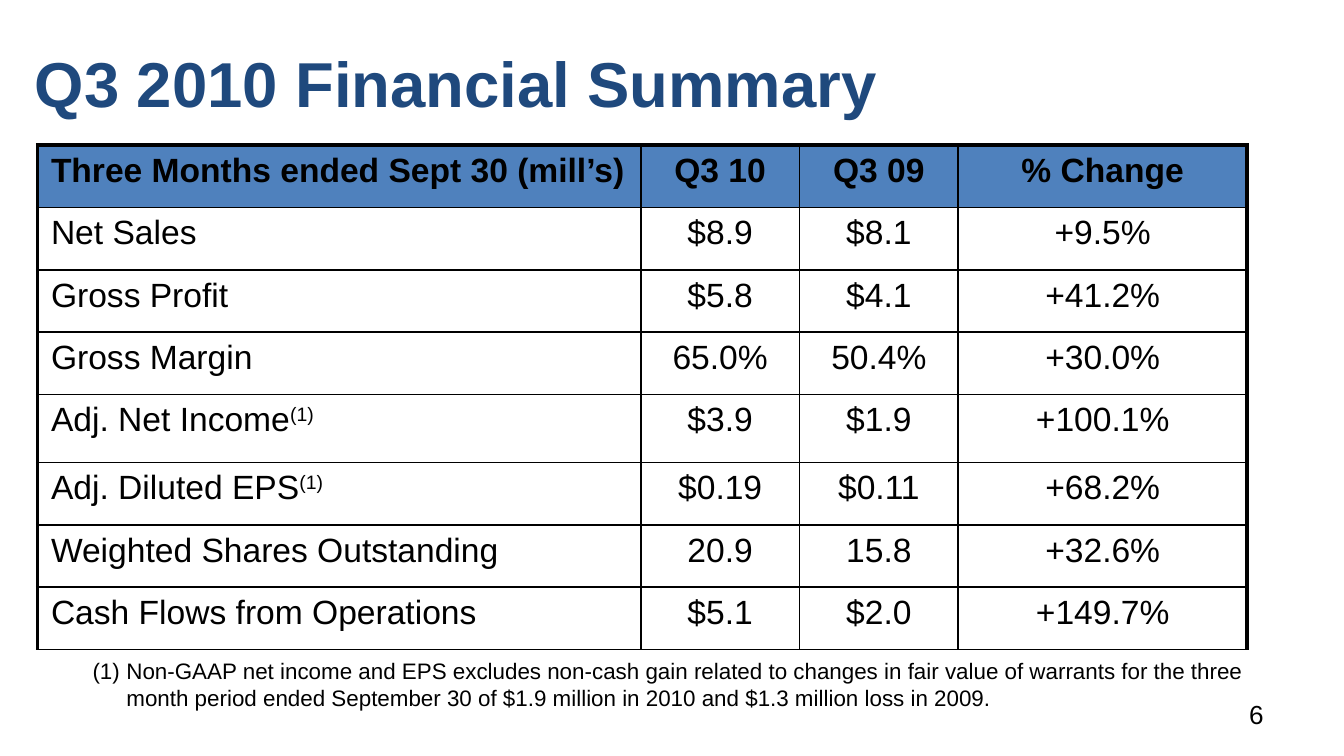
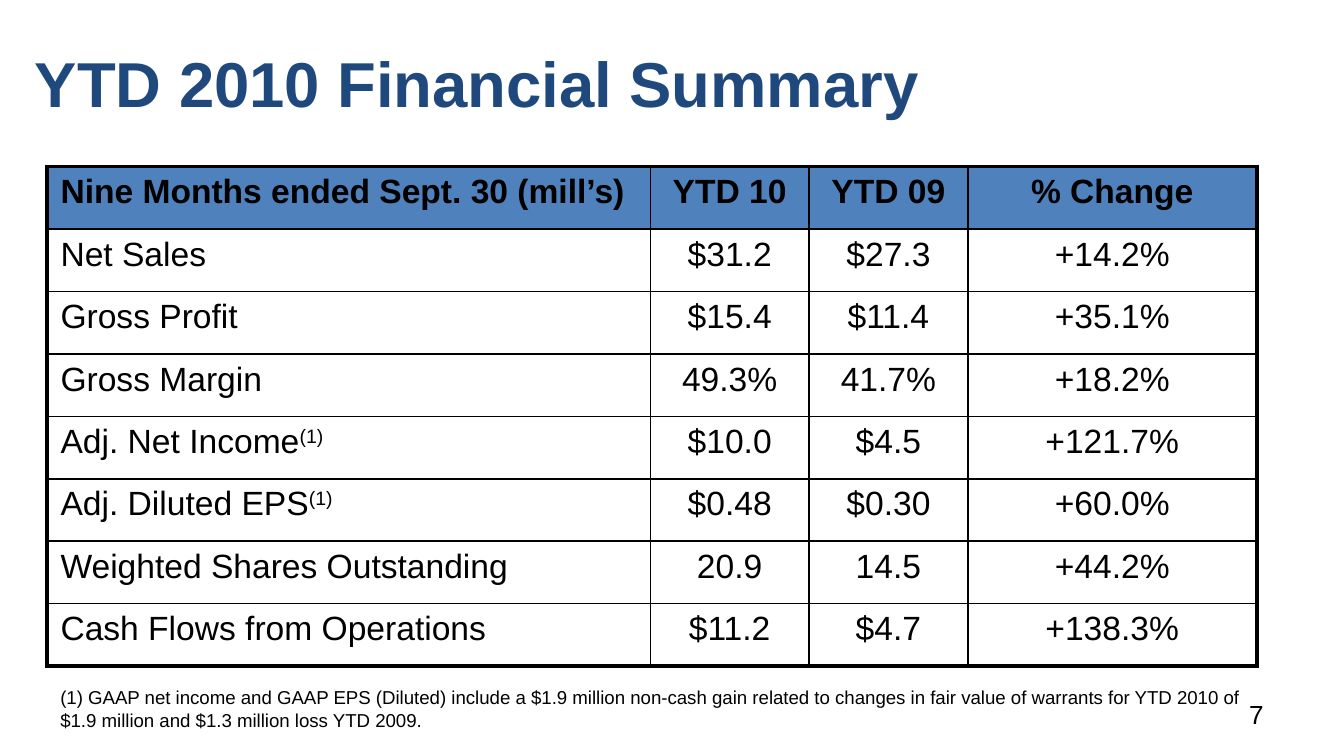
from dataclasses import dataclass

from lxml.etree import SubElement
from pptx import Presentation
from pptx.dml.color import RGBColor
from pptx.enum.text import MSO_ANCHOR, PP_ALIGN
from pptx.oxml import parse_xml
from pptx.oxml.ns import nsdecls, qn
from pptx.util import Cm, Pt


@dataclass(frozen=True)
class Theme:
    font: str = "Arial"
    navy: str = "1F497D"
    blue: str = "4F81BD"
    black: str = "000000"
    title: int = 34
    body: int = 18
    page: int = 14
    thin: float = 1
    thick: float = 2.25


THEME = Theme()
WIDTHS = (11.4, 3, 3, 5.46)
ROW = 1.18
TALL = 1.28
MARK = "(1)"
LABELS = (
    "Net Sales",
    "Gross Profit",
    "Gross Margin",
    "Adj. Net Income",
    "Adj. Diluted EPS",
    "Weighted Shares Outstanding",
    "Cash Flows from Operations",
)
MARKED = ("Adj. Net Income", "Adj. Diluted EPS")

REPORTS = (
    {
        "title": "Q3 2010 Financial Summary",
        "page": "6",
        "place": (0.71, 2.74),
        "head": ("Three Months ended Sept 30 (mill’s)", "Q3 10", "Q3 09", "% Change"),
        "values": (
            ("$8.9", "$8.1", "+9.5%"),
            ("$5.8", "$4.1", "+41.2%"),
            ("65.0%", "50.4%", "+30.0%"),
            ("$3.9", "$1.9", "+100.1%"),
            ("$0.19", "$0.11", "+68.2%"),
            ("20.9", "15.8", "+32.6%"),
            ("$5.1", "$2.0", "+149.7%"),
        ),
        "tall": (4,),
        "base": THEME.thin,
        "note": "Non-GAAP net income and EPS excludes non-cash gain related to changes in "
                "fair value of warrants for the three month period ended September 30 of "
                "$1.9 million in 2010 and $1.3 million loss in 2009.",
        "area": (1.5, 11.56, 22.81, 2.06),
        "size": 12,
        "inset": 0.86,
        "anchor": MSO_ANCHOR.TOP,
        "number": True,
    },
    {
        "title": "YTD 2010 Financial Summary",
        "page": "7",
        "place": (0.89, 3.15),
        "head": ("Nine Months ended Sept. 30 (mill’s)", "YTD 10", "YTD 09", "% Change"),
        "values": (
            ("$31.2", "$27.3", "+14.2%"),
            ("$15.4", "$11.4", "+35.1%"),
            ("49.3%", "41.7%", "+18.2%"),
            ("$10.0", "$4.5", "+121.7%"),
            ("$0.48", "$0.30", "+60.0%"),
            ("20.9", "14.5", "+44.2%"),
            ("$11.2", "$4.7", "+138.3%"),
        ),
        "tall": (),
        "base": THEME.thick,
        "note": "(1) GAAP net income and GAAP EPS (Diluted) include a $1.9 million non-cash "
                "gain related to changes in fair value of warrants for YTD 2010 of "
                "$1.9 million and $1.3 million loss YTD 2009.",
        "area": (0.89, 12.83, 22.81, 1.12),
        "size": 10,
        "inset": 0.13,
        "anchor": MSO_ANCHOR.MIDDLE,
        "number": False,
    },
)


def add_run(para, text, size, color=THEME.black, bold=False):
    run = para.add_run()
    run.text = text
    run.font.name = THEME.font
    run.font.size = Pt(size)
    run.font.bold = bold
    run.font.color.rgb = RGBColor.from_string(color)
    return run


def add_box(slide, area, anchor, inset=0.13):
    """Add a wrapping text box, given in cm, and return its first paragraph."""
    frame = slide.shapes.add_textbox(*map(Cm, area)).text_frame
    frame.word_wrap = True
    frame.vertical_anchor = anchor
    frame.margin_top = Cm(inset)
    return frame.paragraphs[0]


deck = Presentation()
deck.slide_width, deck.slide_height = Cm(25.4), Cm(14.29)

for report in REPORTS:
    slide = deck.slides.add_slide(deck.slide_layouts[6])

    para = add_box(slide, (0.41, 0.58, 17.48, 2.39), MSO_ANCHOR.TOP, 0.25)
    add_run(para, report["title"], THEME.title, THEME.navy, True)

    para = add_box(slide, (18.21, 13, 5.92, 0.99), MSO_ANCHOR.MIDDLE)
    para.alignment = PP_ALIGN.RIGHT
    add_run(para, report["page"], THEME.page)

    # Financial table
    rows = [report["head"]]
    rows += [(label, *line) for label, line in zip(LABELS, report["values"])]
    heights = [TALL if i in report["tall"] else ROW for i in range(len(rows))]
    left, top = report["place"]
    table = slide.shapes.add_table(
        len(rows), len(WIDTHS), Cm(left), Cm(top), Cm(sum(WIDTHS)), Cm(sum(heights))
    ).table
    table.first_row = table.horz_banding = False
    for col, width in zip(table.columns, WIDTHS):
        col.width = Cm(width)

    for i, line in enumerate(rows):
        table.rows[i].height = Cm(heights[i])
        for j, text in enumerate(line):
            cell = table.cell(i, j)
            para = cell.text_frame.paragraphs[0]
            para.alignment = PP_ALIGN.CENTER if j else PP_ALIGN.LEFT
            add_run(para, text, THEME.body, bold=i == 0)
            if text in MARKED:
                mark = add_run(para, MARK, THEME.body)
                mark.font._element.set("baseline", "30000")

            if i == 0:
                cell.fill.solid()
                cell.fill.fore_color.rgb = RGBColor.from_string(THEME.blue)
            else:
                cell.fill.background()

            edges = {
                "lnL": THEME.thick if j == 0 else THEME.thin,
                "lnR": THEME.thick if j == len(WIDTHS) - 1 else THEME.thin,
                "lnT": THEME.thick if i == 0 else THEME.thin,
                "lnB": report["base"] if i == len(rows) - 1 else THEME.thin,
            }
            props = cell._tc.get_or_add_tcPr()
            for spot, (tag, weight) in enumerate(edges.items()):
                props.insert(spot, parse_xml(
                    f'<a:{tag} {nsdecls("a")} w="{Pt(weight)}"><a:solidFill>'
                    f'<a:srgbClr val="{THEME.black}"/></a:solidFill></a:{tag}>'
                ))

    # Footnote
    para = add_box(slide, report["area"], report["anchor"], report["inset"])
    if report["number"]:
        props = para._p.get_or_add_pPr()
        props.set("marL", str(Cm(0.64)))
        props.set("indent", str(-Cm(0.64)))
        SubElement(props, qn("a:buAutoNum"), type="arabicParenBoth")
    add_run(para, report["note"], report["size"])

deck.save("out.pptx")
